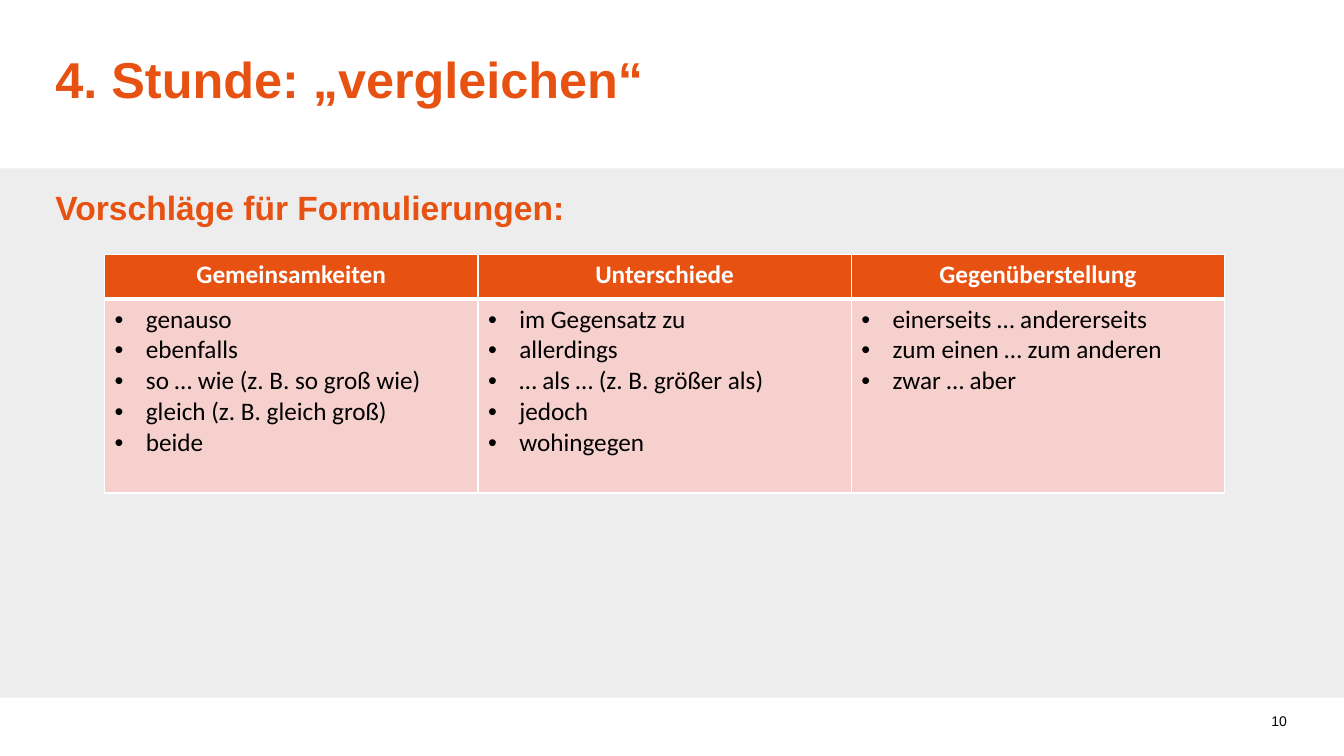
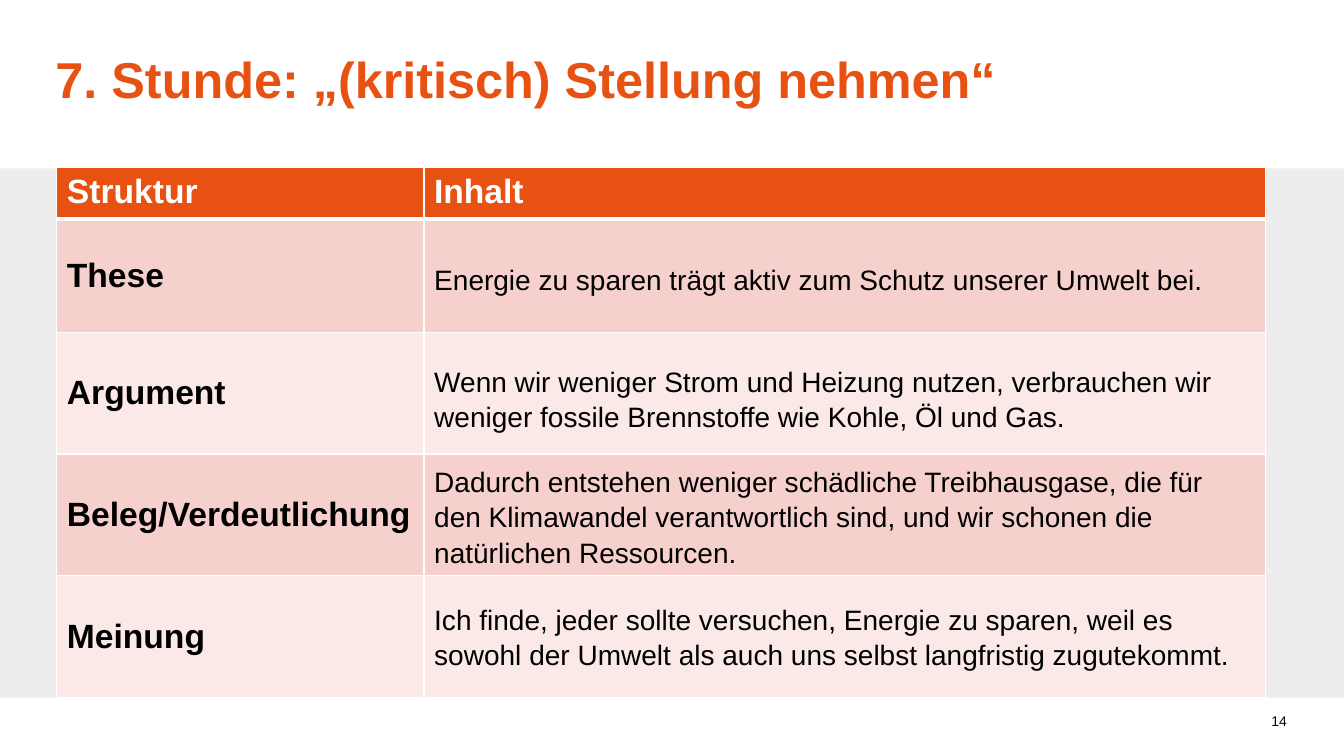
import pptx
import pptx.dml.color
import pptx.enum.shapes
import pptx.enum.text
import pptx.oxml
import pptx.oxml.ns
import pptx.util
from lxml import etree

COLORS = {
    "accent": "E75112",
    "band": "EDEDED",
    "rose": "F6D0CC",
    "blush": "FAE9E7",
    "white": "FFFFFF",
    "black": "000000",
}
COLS, ROWS = 160, 90
ALIGN = pptx.enum.text.PP_ALIGN
ANCHOR = pptx.enum.text.MSO_ANCHOR
qn = pptx.oxml.ns.qn


def rgb(name):
    return pptx.dml.color.RGBColor.from_string(COLORS[name])


class Deck:
    def __init__(self):
        self.prs = pptx.Presentation()
        self.prs.slide_width = pptx.util.Inches(13.33)
        self.prs.slide_height = pptx.util.Inches(7.5)
        self.s = None

    def x(self, cols):
        return round(self.prs.slide_width * cols / COLS)

    def y(self, rows):
        return round(self.prs.slide_height * rows / ROWS)

    def box(self, left, top, width, height):
        return self.x(left), self.y(top), self.x(width), self.y(height)

    def slide(self, title, number):
        self.s = self.prs.slides.add_slide(self.prs.slide_layouts[6])
        self.band()
        self.text(title, (6.6, 5.76, 142, 12.8), 36, "accent", bold=True)
        self.text(str(number), (142.4, 83.4, 10.8, 4.8), 10, "black",
                  align=ALIGN.RIGHT, anchor=ANCHOR.MIDDLE)

    def band(self):
        sp = self.s.shapes.add_shape(
            pptx.enum.shapes.MSO_SHAPE.RECTANGLE, *self.box(0, 20.05, COLS, 63))
        sp.shadow.inherit = False
        sp.fill.solid()
        sp.fill.fore_color.rgb = rgb("band")
        sp.line.fill.background()

    def heading(self, text):
        self.text(text, (6.6, 22.2, 149.3, 47.9), 24, "accent", bold=True)

    def text(self, text, area, size, color, bold=False, spacing=1.0,
             align=ALIGN.LEFT, anchor=ANCHOR.TOP, inset=(0, 0)):
        tf = self.s.shapes.add_textbox(*self.box(*area)).text_frame
        tf.word_wrap = True
        tf.margin_left = tf.margin_right = self.x(inset[0])
        tf.margin_top = tf.margin_bottom = self.y(inset[1])
        tf.vertical_anchor = anchor
        p = tf.paragraphs[0]
        p.text = text
        p.alignment = align
        p.line_spacing = spacing
        self.font(p, size, color, bold)

    def font(self, p, size, color, bold=False, name="Arial"):
        p.font.name = name
        p.font.size = pptx.util.Pt(size)
        p.font.bold = bold
        p.font.color.rgb = rgb(color)

    def table(self, left, top, widths, heights):
        area = self.box(left, top, sum(widths), sum(heights))
        table = self.s.shapes.add_table(len(heights), len(widths), *area).table
        table.horz_banding = False
        for column, width in zip(table.columns, widths):
            column.width = self.x(width)
        for row, height in zip(table.rows, heights):
            row.height = self.y(height)
        for i in range(len(heights)):
            fill = "accent" if i == 0 else ("rose" if i % 2 else "blush")
            for cell in table.rows[i].cells:
                self.borders(cell, top=3 if i == 1 else 1, bottom=3 if i == 0 else 1)
                cell.fill.solid()
                cell.fill.fore_color.rgb = rgb(fill)
        return table

    def borders(self, cell, top, bottom):
        tc_pr = cell._tc.get_or_add_tcPr()
        for side, width in (("L", 1), ("R", 1), ("T", top), ("B", bottom)):
            ln = etree.SubElement(tc_pr, qn("a:ln" + side), w=str(pptx.util.Pt(width)))
            fill = etree.SubElement(ln, qn("a:solidFill"))
            etree.SubElement(fill, qn("a:srgbClr"), val=COLORS["white"])

    def cell(self, cell, lines, size, color, bold=False, name="Arial", bullets=False,
             align=ALIGN.LEFT, anchor=ANCHOR.TOP):
        cell.vertical_anchor = anchor
        tf = cell.text_frame
        tf.text = "\n".join(lines)
        for p in tf.paragraphs:
            p.alignment = align
            if bullets:
                self.bullet(p)
            self.font(p, size, color, bold, name)

    def bullet(self, p):
        p_pr = p._p.get_or_add_pPr()
        indent = pptx.util.Inches(0.31)
        p_pr.set("marL", str(indent))
        p_pr.set("indent", str(-indent))
        etree.SubElement(p_pr, qn("a:buFont"), typeface="Arial")
        etree.SubElement(p_pr, qn("a:buChar"), char="•")


def phrases_slide(deck):
    deck.slide("4. Stunde: „vergleichen“", 10)
    deck.heading("Vorschläge für Formulierungen:")
    phrases = {
        "Gemeinsamkeiten": ["genauso", "ebenfalls", "so … wie (z. B. so groß wie)",
                            "gleich (z. B. gleich groß)", "beide"],
        "Unterschiede": ["im Gegensatz zu", "allerdings", "… als … (z. B. größer als)",
                         "jedoch", "wohingegen"],
        "Gegenüberstellung": ["einerseits … andererseits", "zum einen … zum anderen",
                              "zwar … aber"],
    }
    table = deck.table(12.45, 30.3, [44.45] * 3, [5.3, 23.1])
    for j, (head, lines) in enumerate(phrases.items()):
        deck.cell(table.cell(0, j), [head], 18, "white", bold=True, name="Calibri",
                  align=ALIGN.CENTER)
        deck.cell(table.cell(1, j), lines, 18, "black", name="Calibri", bullets=True)


def opinion_slide(deck):
    deck.slide("7. Stunde: „(kritisch) Stellung nehmen“", 14)
    steps = [
        ("These", 30.5, 5.3,
         "Energie zu sparen trägt aktiv zum Schutz unserer Umwelt bei."),
        ("Argument", 42.6, 9.3,
         "Wenn wir weniger Strom und Heizung nutzen, verbrauchen wir "
         "weniger fossile Brennstoffe wie Kohle, Öl und Gas."),
        ("Beleg/Verdeutlichung", 54.5, 13.3,
         "Dadurch entstehen weniger schädliche Treibhausgase, die für den Klimawandel "
         "verantwortlich sind, und wir schonen die natürlichen Ressourcen."),
        ("Meinung", 70.9, 9.3,
         "Ich finde, jeder sollte versuchen, Energie zu sparen, weil es "
         "sowohl der Umwelt als auch uns selbst langfristig zugutekommt."),
    ]
    table = deck.table(6.77, 19.95, [43.7, 100.2], [6.1, 13.5] + [14.5] * 3)
    for j, head in enumerate(("Struktur", "Inhalt")):
        deck.cell(table.cell(0, j), [head], 24, "white", bold=True)
    for i, (step, top, height, content) in enumerate(steps, 1):
        deck.cell(table.cell(i, 0), [step], 24, "black", bold=True, anchor=ANCHOR.MIDDLE)
        deck.text(content, (50.5, top, 100.2, height), 20, "black", spacing=1.05,
                  inset=(1.2, 0.6))


def main():
    deck = Deck()
    phrases_slide(deck)
    opinion_slide(deck)
    deck.prs.save("out.pptx")


if __name__ == "__main__":
    main()
